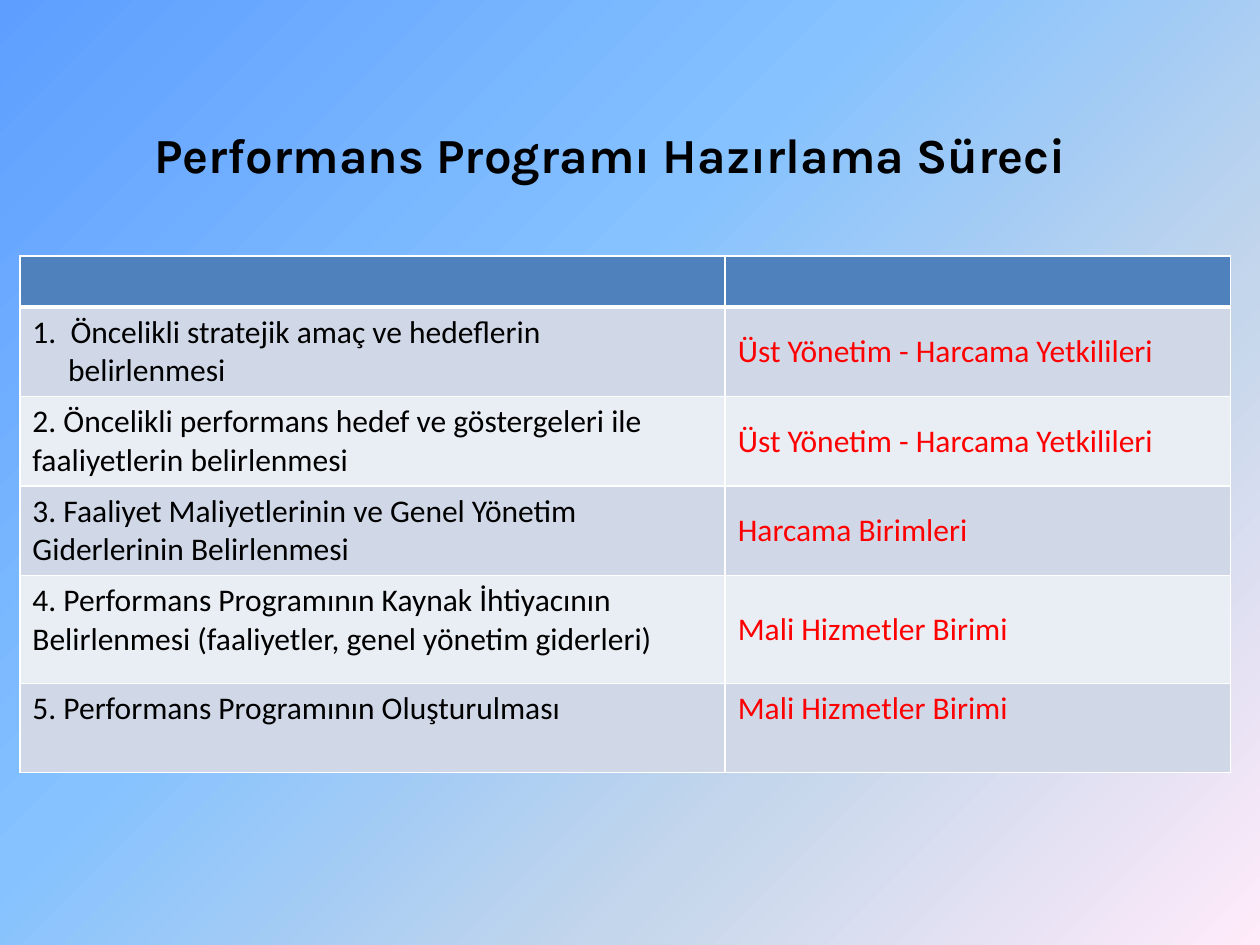
from copy import deepcopy

from lxml.etree import SubElement
from pptx import Presentation
from pptx.dml.color import RGBColor
from pptx.enum.text import MSO_ANCHOR as Anchor, PP_ALIGN as Align
from pptx.oxml.ns import qn
from pptx.util import Cm, Pt

BLACK = RGBColor(0x00, 0x00, 0x00)
RED = RGBColor(0xFF, 0x00, 0x00)
WHITE = RGBColor(0xFF, 0xFF, 0xFF)
HEADER = RGBColor(0x4F, 0x81, 0xBD)
BANDS = [RGBColor(0xD0, 0xD8, 0xE8), RGBColor(0xE9, 0xED, 0xF4)]
SKY = [
    (0, RGBColor(0x5E, 0x9E, 0xFF)),
    (0.4, RGBColor(0x85, 0xC2, 0xFF)),
    (0.7, RGBColor(0xC4, 0xD6, 0xEB)),
    (1, RGBColor(0xFF, 0xEB, 0xFA)),
]

TITLE = "Performans Programı Hazırlama Süreci"
STEPS = [
    (["1.  Öncelikli stratejik amaç ve hedeflerin", "belirlenmesi"],
     "Üst Yönetim - Harcama Yetkilileri"),
    (["2. Öncelikli performans hedef ve göstergeleri ile faaliyetlerin belirlenmesi"],
     "Üst Yönetim - Harcama Yetkilileri"),
    (["3. Faaliyet Maliyetlerinin ve Genel Yönetim Giderlerinin Belirlenmesi"],
     "Harcama Birimleri"),
    (["4. Performans Programının Kaynak İhtiyacının Belirlenmesi "
      "(faaliyetler, genel yönetim giderleri)"],
     "Mali Hizmetler Birimi"),
    (["5. Performans Programının Oluşturulması"], "Mali Hizmetler Birimi"),
]
COL_WIDTHS = [Cm(14.22), Cm(10.19)]
ROW_HEIGHTS = [Cm(1.03)] + [Cm(1.8)] * 3 + [Cm(2.17), Cm(1.8)]


def paint_background(s):
    """Fill the slide with the diagonal gradient."""
    fill = s.background.fill
    fill.gradient()
    fill.gradient_angle = 315
    stops = fill.gradient_stops
    first = stops[0]._gs
    for _ in range(len(SKY) - len(stops)):
        first.addnext(deepcopy(first))
    for stop, (position, color) in zip(fill.gradient_stops, SKY):
        stop.position = position
        stop.color.rgb = color


def add_run(p, text, font, size, color, bold=False):
    """Add one formatted run to a paragraph."""
    r = p.add_run()
    r.text = text
    r.font.name = font
    r.font.size = Pt(size)
    r.font.bold = bold
    r.font.color.rgb = color


def add_title(s, left, top, width, height):
    """Place the centred title in its box."""
    tf = s.shapes.add_textbox(left, top, width, height).text_frame
    tf.word_wrap = True
    p = tf.paragraphs[0]
    p.alignment = Align.CENTER
    add_run(p, TITLE, "Karla", 28, BLACK, True)


def style_cell(cell, color, top=1, bottom=1):
    """Give a cell its white borders and its fill."""
    tc_pr = cell._tc.get_or_add_tcPr()
    for side, width in zip("LRTB", (1, 1, top, bottom)):
        ln = SubElement(tc_pr, qn(f"a:ln{side}"), w=str(Pt(width)))
        solid = SubElement(ln, qn("a:solidFill"))
        SubElement(solid, qn("a:srgbClr"), val=str(WHITE))
    cell.fill.solid()
    cell.fill.fore_color.rgb = color


def write_cell(cell, lines, color):
    """Write lines as paragraphs, indenting those after the first."""
    tf = cell.text_frame
    for i, line in enumerate(lines):
        p = tf.add_paragraph() if i else tf.paragraphs[0]
        if i:
            p._p.get_or_add_pPr().set("marL", str(Cm(0.72)))
        add_run(p, line, "Calibri", 18, color)


def add_steps_table(s, left, top):
    """Place the table of steps and responsible units."""
    table = s.shapes.add_table(
        len(ROW_HEIGHTS), len(COL_WIDTHS), left, top, sum(COL_WIDTHS), sum(ROW_HEIGHTS)
    ).table
    for col, width in zip(table.columns, COL_WIDTHS):
        col.width = width
    for row, height in zip(table.rows, ROW_HEIGHTS):
        row.height = height
    for cell in table.rows[0].cells:
        style_cell(cell, HEADER, bottom=3)
    for i, (step, unit) in enumerate(STEPS, 1):
        step_cell, unit_cell = table.rows[i].cells
        for cell in (step_cell, unit_cell):
            style_cell(cell, BANDS[(i - 1) % 2], top=3 if i == 1 else 1)
        write_cell(step_cell, step, BLACK)
        write_cell(unit_cell, [unit], RED)
        unit_cell.vertical_anchor = Anchor.TOP if i == len(STEPS) else Anchor.MIDDLE


def main():
    """Build and save the slide."""
    prs = Presentation()
    prs.slide_width, prs.slide_height = Cm(25.4), Cm(19.05)
    s = prs.slides.add_slide(prs.slide_layouts[6])
    paint_background(s)
    add_steps_table(s, Cm(0.4), Cm(5.16))
    add_title(s, Cm(1.68), Cm(2.39), Cm(21.23), Cm(1.45))
    prs.save("out.pptx")


if __name__ == "__main__":
    main()
